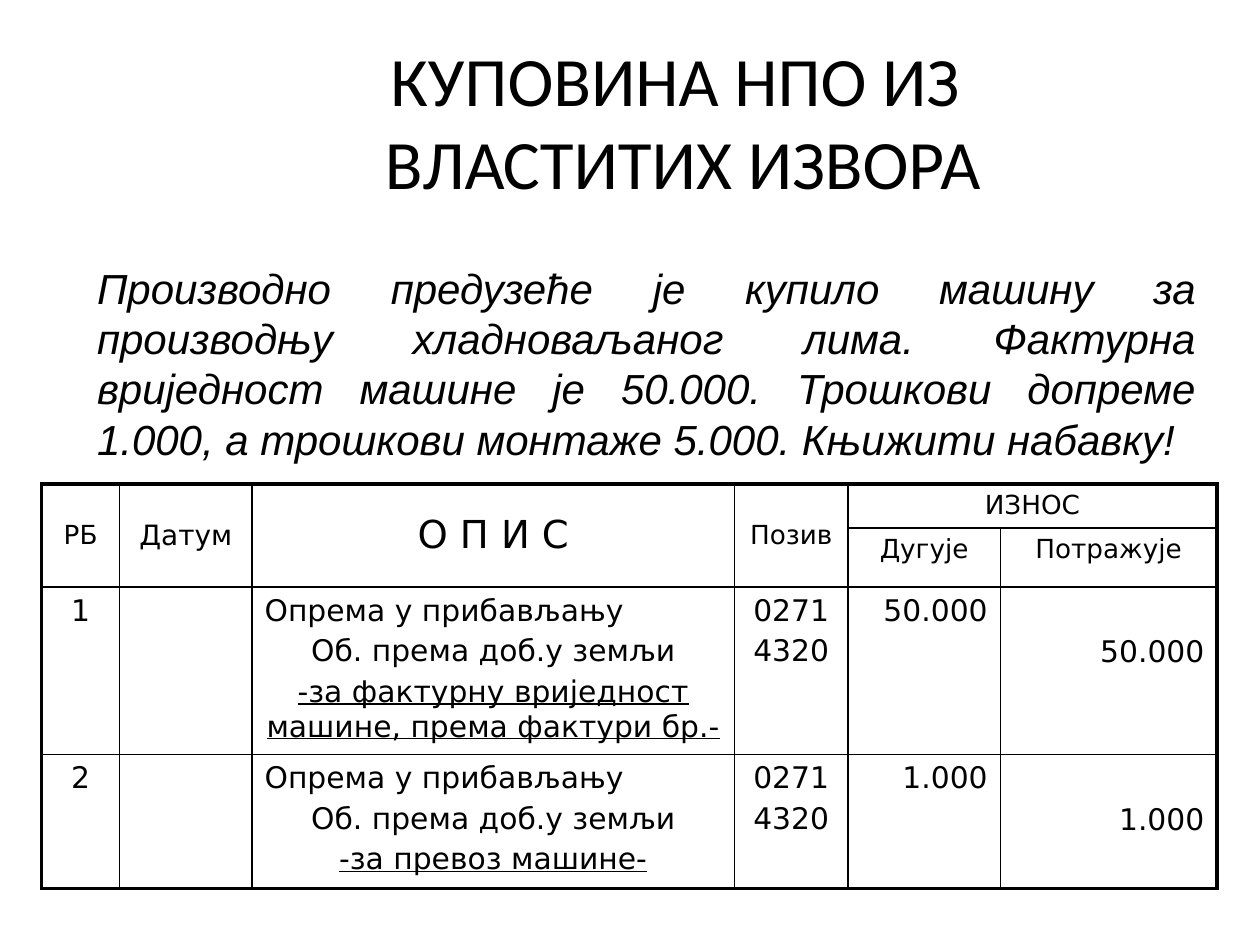
from lxml import etree
from pptx import Presentation
from pptx import util as u
from pptx.dml.color import RGBColor
from pptx.enum import text
from pptx.oxml.ns import qn

BLACK = "000000"
ALIGN = {"left": text.PP_ALIGN.LEFT, "center": text.PP_ALIGN.CENTER,
         "right": text.PP_ALIGN.RIGHT, "justify": text.PP_ALIGN.JUSTIFY}

TITLE = ["КУПОВИНА НПО ИЗ ", "ВЛАСТИТИХ ИЗВОРА"]
TASK = ("Производно предузеће је купило машину за производњу хладноваљаног лима. "
        "Фактурна вриједност машине је 50.000. Трошкови допреме 1.000, "
        "а трошкови монтаже 5.000. Књижити набавку!")

# row, column, rows spanned, columns spanned, label, size
HEADERS = [
    (0, 0, 2, 1, "РБ", 15),
    (0, 1, 2, 1, "Датум", 16),
    (0, 2, 2, 1, "О П И С", 22),
    (0, 3, 2, 1, "Позив", 15),
    (0, 4, 1, 2, "ИЗНОС", 15),
    (1, 4, 1, 1, "Дугује", 15),
    (1, 5, 1, 1, "Потражује", 15),
]
DEBIT_ACCOUNT = ("Опрема у прибављању", "0271")
CREDIT_ACCOUNT = ("Об. према доб.у земљи", "4320")
# number, explanation, amount
ENTRIES = [
    ("1", "-за фактурну вриједност машине, према фактури бр.-", "50.000"),
    ("2", "-за превоз машине-", "1.000"),
]
COLUMNS = [0.62, 1.05, 3.83, 0.9, 1.21, 1.72]
ROWS = [0.35, 0.47, 1.33, 1.06]
TABLE_LEFT, TABLE_TOP = 0.33, 3.84
ENTRY_SIZE = 17
CELL_TOP = 0.05
LINE_STEP = 0.33
CREDIT_INDENT = 0.37
OUTER, INNER = 2.25, 1


def color(value):
    return RGBColor.from_string(value)


def place(shape, left, top, width, height):
    shape.left, shape.top = u.Inches(left), u.Inches(top)
    shape.width, shape.height = u.Inches(width), u.Inches(height)


def add_run(paragraph, content, font, size, italic=False, underline=False):
    run = paragraph.add_run()
    run.text = content
    run.font.name, run.font.size = font, u.Pt(size)
    run.font.italic, run.font.underline = italic, underline
    run.font.color.rgb = color(BLACK)


def write_cell(cell, lines, size=ENTRY_SIZE):
    """Write lines given as (text, alignment, left indent, underline)."""
    frame = cell.text_frame
    for index, (content, align, indent, underline) in enumerate(lines):
        paragraph = frame.add_paragraph() if index else frame.paragraphs[0]
        paragraph.alignment = ALIGN[align]
        if index:
            paragraph.space_before = u.Pt(0.2 * size)
        if indent:
            paragraph._p.get_or_add_pPr().set("marL", str(u.Inches(indent)))
        add_run(paragraph, content, "DejaVu Sans", size, underline=underline)


def set_borders(cell, widths):
    properties = cell._tc.get_or_add_tcPr()
    for index, (side, width) in enumerate(zip("LRTB", widths)):
        line = etree.Element(qn(f"a:ln{side}"), w=str(u.Pt(width)))
        fill = etree.SubElement(line, qn("a:solidFill"))
        etree.SubElement(fill, qn("a:srgbClr"), val=BLACK)
        properties.insert(index, line)


def add_title(slide):
    title = slide.shapes.title
    place(title, 0.42, 0.33, 10, 1.25)
    frame = title.text_frame
    frame.auto_size = text.MSO_AUTO_SIZE.NONE
    frame.vertical_anchor = text.MSO_ANCHOR.MIDDLE
    paragraph = frame.paragraphs[0]
    paragraph.alignment = ALIGN["center"]
    for index, line in enumerate(TITLE):
        if index:
            paragraph.add_line_break()
        add_run(paragraph, line, "Calibri", 39.6)


def add_task(slide):
    body = slide.placeholders[1]
    place(body, 0.67, 2.03, 8.92, 1.7)
    frame = body.text_frame
    frame.auto_size = text.MSO_AUTO_SIZE.NONE
    paragraph = frame.paragraphs[0]
    properties = paragraph._p.get_or_add_pPr()
    properties.set("marL", "0")
    properties.set("indent", "0")
    etree.SubElement(properties, qn("a:buNone"))
    paragraph.alignment = ALIGN["justify"]
    paragraph.space_before = u.Pt(0)
    add_run(paragraph, TASK, "Arial", 24, italic=True)


def add_journal(slide):
    frame = slide.shapes.add_table(
        len(ROWS), len(COLUMNS), u.Inches(TABLE_LEFT), u.Inches(TABLE_TOP),
        u.Inches(sum(COLUMNS)), u.Inches(sum(ROWS)))
    table = frame.table
    table.first_row = table.horz_banding = False
    for column, width in zip(table.columns, COLUMNS):
        column.width = u.Inches(width)
    for row, height in zip(table.rows, ROWS):
        row.height = u.Inches(height)

    for row, column, height, width, label, size in HEADERS:
        cell = table.cell(row, column)
        if height * width > 1:
            cell.merge(table.cell(row + height - 1, column + width - 1))
        if height > 1:
            cell.vertical_anchor = text.MSO_ANCHOR.MIDDLE
        write_cell(cell, [(label, "center", 0, False)], size)

    for row, (number, explanation, amount) in enumerate(ENTRIES, start=2):
        debit, debit_code = DEBIT_ACCOUNT
        credit, credit_code = CREDIT_ACCOUNT
        contents = {
            0: [(number, "center", 0, False)],
            2: [(debit, "left", 0, False),
                (credit, "left", CREDIT_INDENT, False),
                (explanation, "center", 0, True)],
            3: [(code, "center", 0, False) for code in (debit_code, credit_code)],
            4: [(amount, "right", 0, False)],
            5: [(amount, "right", 0, False)],
        }
        for column, lines in contents.items():
            write_cell(table.cell(row, column), lines)
        # The credit amount stands level with the second account.
        table.cell(row, 5).margin_top = u.Inches(CELL_TOP + LINE_STEP)

    for row in range(len(ROWS)):
        for column in range(len(COLUMNS)):
            cell = table.cell(row, column)
            cell.fill.background()
            last_column = column + cell.span_width == len(COLUMNS)
            edges = (column == 0, last_column, row == 0, row == len(ROWS) - 1)
            set_borders(cell, [OUTER if edge else INNER for edge in edges])


def main():
    presentation = Presentation()
    presentation.slide_width, presentation.slide_height = u.Inches(10), u.Inches(7.5)
    slide = presentation.slides.add_slide(presentation.slide_layouts[1])
    add_title(slide)
    add_task(slide)
    add_journal(slide)
    presentation.save("out.pptx")


if __name__ == "__main__":
    main()
